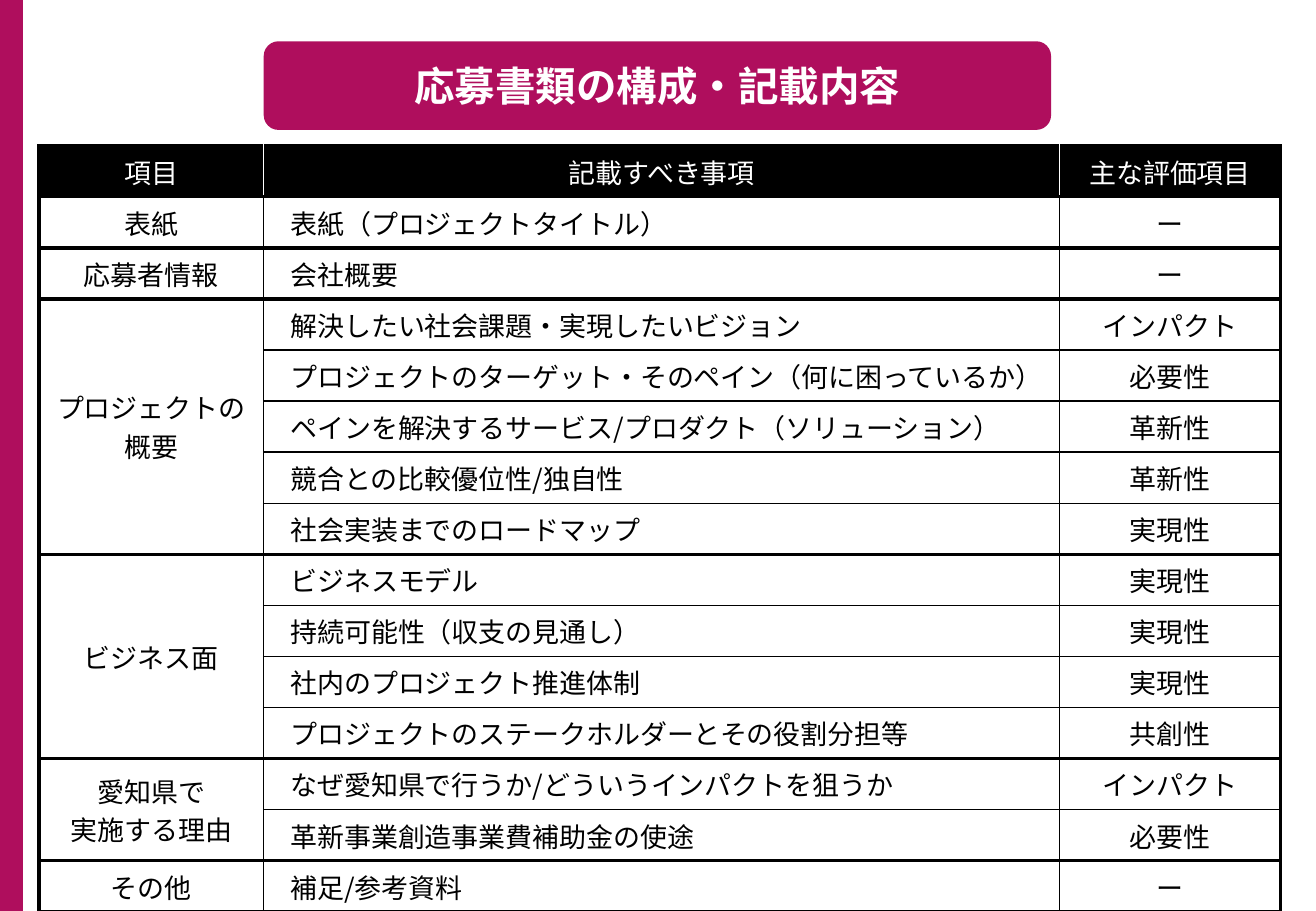
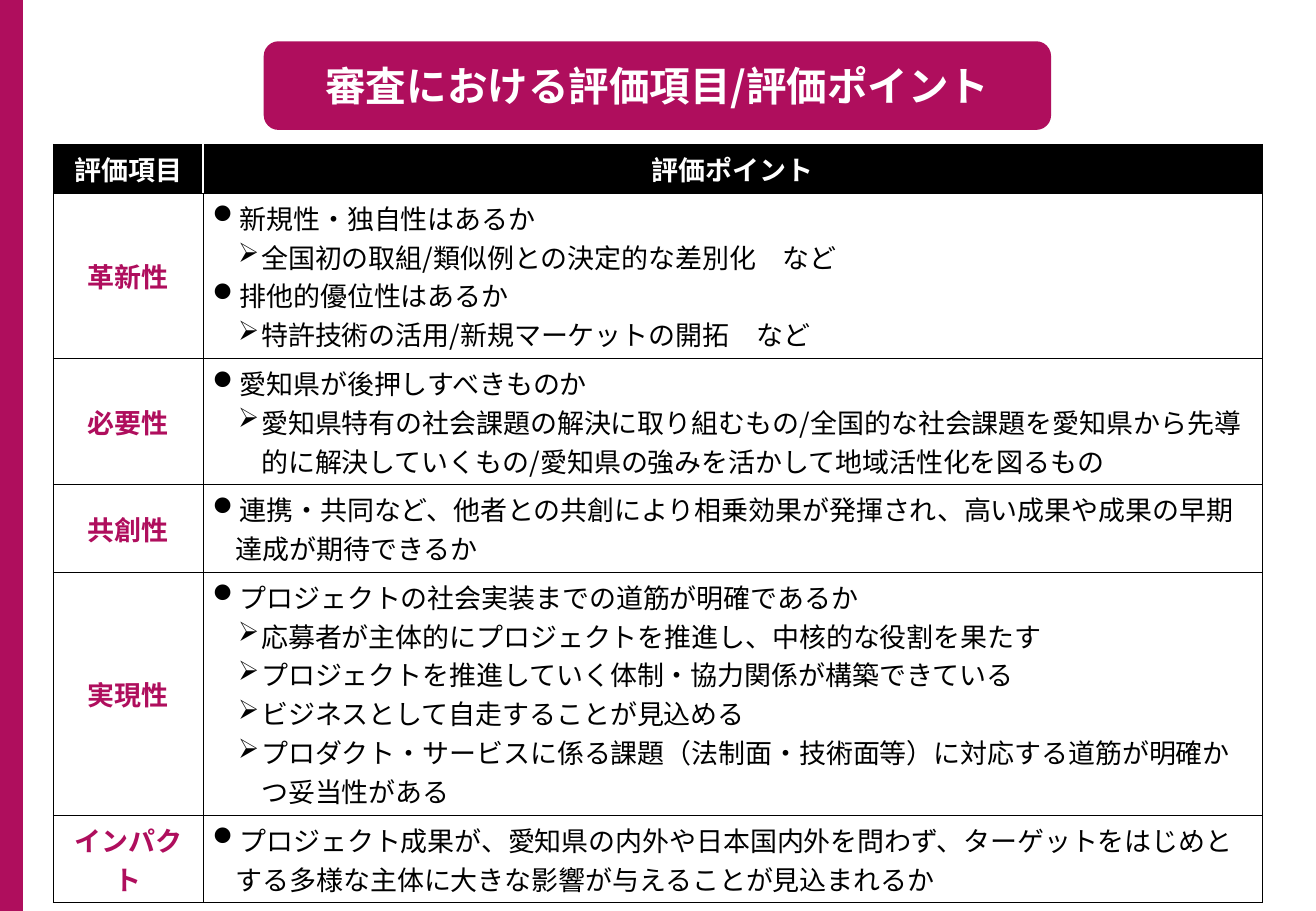
"""Build two slides on the application documents and the screening criteria."""
from lxml import etree
from pptx import Presentation
from pptx.dml.color import RGBColor
from pptx.enum.shapes import MSO_SHAPE
from pptx.enum.text import MSO_ANCHOR, MSO_AUTO_SIZE, PP_ALIGN
from pptx.oxml.ns import qn
from pptx.util import Inches, Pt

RECTANGLE, ROUNDED = MSO_SHAPE.RECTANGLE, MSO_SHAPE.ROUNDED_RECTANGLE
MIDDLE = MSO_ANCHOR.MIDDLE
NO_AUTOFIT = MSO_AUTO_SIZE.NONE
CENTER, LEFT = PP_ALIGN.CENTER, PP_ALIGN.LEFT

COLORS = {"accent": "AF0E5D", "ink": "000000", "paper": "FFFFFF"}
FONT, BULLET_FONT = "Noto Sans CJK JP", "Wingdings"
TITLE_SIZE, BODY_SIZE = 24, 16
SLIDE_WIDTH, SLIDE_HEIGHT = 10.83, 7.5
BAND_WIDTH = 0.19
TITLE_BOX = (2.17, 0.34, 6.48, 0.73)
BACKDROP = (
    (RECTANGLE, (0, 0, SLIDE_WIDTH, SLIDE_HEIGHT), "accent"),
    (RECTANGLE, (BAND_WIDTH, 0, SLIDE_WIDTH - BAND_WIDTH, SLIDE_HEIGHT), "paper"),
    (ROUNDED, TITLE_BOX, "accent"),
)
THICK, MEDIUM, THIN = 2.25, 1, 0.5
BULLETS = (("l", 0.19), ("Ø", 0.4))
HANGING = 0.19

DOCUMENTS = {
    "title": "応募書類の構成・記載内容",
    "header": ("項目", "記載すべき事項", "主な評価項目"),
    "left": 0.32,
    "top": 1.2,
    "widths": (1.85, 6.55, 1.82),
    "row_height": 0.42,
    "groups": [
        ("表紙", [("表紙（プロジェクトタイトル）", "ー")]),
        ("応募者情報", [("会社概要", "ー")]),
        ("プロジェクトの\n概要", [
            ("解決したい社会課題・実現したいビジョン", "インパクト"),
            ("プロジェクトのターゲット・そのペイン（何に困っているか）", "必要性"),
            ("ペインを解決するサービス/プロダクト（ソリューション）", "革新性"),
            ("競合との比較優位性/独自性", "革新性"),
            ("社会実装までのロードマップ", "実現性"),
        ]),
        ("ビジネス面", [
            ("ビジネスモデル", "実現性"),
            ("持続可能性（収支の見通し）", "実現性"),
            ("社内のプロジェクト推進体制", "実現性"),
            ("プロジェクトのステークホルダーとその役割分担等", "共創性"),
        ]),
        ("愛知県で\n実施する理由", [
            ("なぜ愛知県で行うか/どういうインパクトを狙うか", "インパクト"),
            ("革新事業創造事業費補助金の使途", "必要性"),
        ]),
        ("その他", [("補足/参考資料", "ー")]),
    ],
}

CRITERIA = {
    "title": "審査における評価項目/評価ポイント",
    "header": ("評価項目", "評価ポイント"),
    "left": 0.44,
    "top": 1.19,
    "widths": (1.23, 8.72),
    "heights": (0.4, 1.36, 1.04, 0.72, 1.99, 0.72),
    "points": [
        ("革新性", [
            (0, "新規性・独自性はあるか"),
            (1, "全国初の取組/類似例との決定的な差別化　など"),
            (0, "排他的優位性はあるか"),
            (1, "特許技術の活用/新規マーケットの開拓　など"),
        ]),
        ("必要性", [
            (0, "愛知県が後押しすべきものか"),
            (1, "愛知県特有の社会課題の解決に取り組むもの/全国的な社会課題を愛知県から"
                "先導的に解決していくもの/愛知県の強みを活かして地域活性化を図るもの"),
        ]),
        ("共創性", [
            (0, "連携・共同など、他者との共創により相乗効果が発揮され、"
                "高い成果や成果の早期達成が期待できるか"),
        ]),
        ("実現性", [
            (0, "プロジェクトの社会実装までの道筋が明確であるか"),
            (1, "応募者が主体的にプロジェクトを推進し、中核的な役割を果たす"),
            (1, "プロジェクトを推進していく体制・協力関係が構築できている"),
            (1, "ビジネスとして自走することが見込める"),
            (1, "プロダクト・サービスに係る課題（法制面・技術面等）に対応する"
                "道筋が明確かつ妥当性がある"),
        ]),
        ("インパクト", [
            (0, "プロジェクト成果が、愛知県の内外や日本国内外を問わず、ターゲットを"
                "はじめとする多様な主体に大きな影響が与えることが見込まれるか"),
        ]),
    ],
}


def rgb(name):
    return RGBColor.from_string(COLORS[name])


def style_text(frame, color, size=BODY_SIZE, bold=False, align=CENTER):
    for paragraph in frame.paragraphs:
        paragraph.alignment = align
        for run in paragraph.runs:
            run.font.name = FONT
            run.font.size = Pt(size)
            run.font.bold = bold
            run.font.color.rgb = rgb(color)
            latin = run.font._element.find(qn("a:latin"))
            east_asian = etree.Element(qn("a:ea"), typeface=FONT)
            latin.addnext(east_asian)


def indent(paragraph, margin, hanging=0.0, bullet=None):
    properties = paragraph._p.get_or_add_pPr()
    properties.set("marL", str(Inches(margin)))
    properties.set("indent", str(-Inches(hanging)))
    if bullet:
        etree.SubElement(properties, qn("a:buFont"), typeface=BULLET_FONT,
                         pitchFamily="2", charset="2")
        etree.SubElement(properties, qn("a:buChar"), char=bullet)


def set_borders(cell, **edges):
    properties = cell._tc.get_or_add_tcPr()
    for side in "LRTB":
        width, color = edges[side]
        line = etree.SubElement(properties, qn(f"a:ln{side}"), w=str(Pt(width)))
        fill = etree.SubElement(line, qn("a:solidFill"))
        etree.SubElement(fill, qn("a:srgbClr"), val=COLORS[color])


def add_backdrop(slide):
    for depth, (outline, box, color) in enumerate(BACKDROP, 2):
        panel = slide.shapes.add_shape(outline, *map(Inches, box))
        panel.shadow.inherit = False
        panel.fill.solid()
        panel.fill.fore_color.rgb = rgb(color)
        panel.line.fill.background()
        slide.slide_layout.shapes.element.insert(depth, panel.element)


def set_title(slide, text):
    title = slide.shapes.title
    title.left, title.top, title.width, title.height = map(Inches, TITLE_BOX)
    frame = title.text_frame
    frame.text = text
    frame.auto_size = NO_AUTOFIT
    frame.vertical_anchor = MIDDLE
    style_text(frame, "paper", TITLE_SIZE, bold=True)


def add_grid(slide, content, heights, outer, inner, bold_header):
    widths = content["widths"]
    table = slide.shapes.add_table(
        len(heights), len(widths), Inches(content["left"]), Inches(content["top"]),
        Inches(sum(widths)), Inches(sum(heights))).table
    table.horz_banding = False
    for column, width in zip(table.columns, widths):
        column.width = Inches(width)
    for row, height in zip(table.rows, heights):
        row.height = Inches(height)
    last = len(widths) - 1
    for index, text in enumerate(content["header"]):
        cell = table.cell(0, index)
        cell.text = text
        finish_cell(cell, "ink",
                    L=(MEDIUM, "paper") if index else (outer, "ink"),
                    R=(MEDIUM, "paper") if index < last else (outer, "ink"),
                    T=(outer, "ink"), B=(inner, "ink"))
        style_text(cell.text_frame, "paper", bold=bold_header)
    return table


def finish_cell(cell, fill, **edges):
    cell.vertical_anchor = MIDDLE
    set_borders(cell, **edges)
    cell.fill.solid()
    cell.fill.fore_color.rgb = rgb(fill)


def fill_row(table, row, texts, outer, divider, top, bottom):
    last = len(texts) - 1
    for index, text in enumerate(texts):
        cell = table.cell(row, index)
        cell.text = text
        finish_cell(cell, "paper",
                    L=(divider if index else outer, "ink"),
                    R=(divider if index < last else outer, "ink"),
                    T=(top if index else max(top, bottom), "ink"),
                    B=(bottom if index else max(top, bottom), "ink"))


def build_documents(slide):
    groups = DOCUMENTS["groups"]
    count = 1 + sum(len(items) for _, items in groups)
    table = add_grid(slide, DOCUMENTS, [DOCUMENTS["row_height"]] * count,
                     THICK, THICK, bold_header=False)
    row = 1
    for group, items in groups:
        end = len(items) - 1
        for offset, (entry, criterion) in enumerate(items):
            fill_row(table, row + offset, (group if offset == 0 else "", entry, criterion),
                     THICK, MEDIUM,
                     MEDIUM if offset else THICK, MEDIUM if offset < end else THICK)
            for index, align in enumerate((CENTER, LEFT, CENTER)):
                style_text(table.cell(row + offset, index).text_frame, "ink", align=align)
            indent(table.cell(row + offset, 1).text_frame.paragraphs[0], 0.12)
        if end:
            table.cell(row, 0).merge(table.cell(row + end, 0))
        row += len(items)


def build_criteria(slide):
    table = add_grid(slide, CRITERIA, CRITERIA["heights"], MEDIUM, THIN, bold_header=True)
    for row, (criterion, points) in enumerate(CRITERIA["points"], 1):
        fill_row(table, row, (criterion, "\n".join(text for _, text in points)),
                 MEDIUM, THIN, THIN, THIN)
        style_text(table.cell(row, 0).text_frame, "accent", bold=True)
        frame = table.cell(row, 1).text_frame
        for paragraph, (level, _) in zip(frame.paragraphs, points):
            bullet, margin = BULLETS[level]
            indent(paragraph, margin, HANGING, bullet)
            paragraph.level = level
        style_text(frame, "ink", align=LEFT)
    for cell in table.iter_cells():
        cell.margin_left = cell.margin_right = Inches(0.08)
        cell.margin_top = cell.margin_bottom = Inches(0.04)


def main():
    deck = Presentation()
    deck.slide_width, deck.slide_height = Inches(SLIDE_WIDTH), Inches(SLIDE_HEIGHT)
    title_only = deck.slide_layouts[5]
    for content, build in ((DOCUMENTS, build_documents), (CRITERIA, build_criteria)):
        slide = deck.slides.add_slide(title_only)
        set_title(slide, content["title"])
        build(slide)
    add_backdrop(slide)
    deck.save("out.pptx")


if __name__ == "__main__":
    main()
